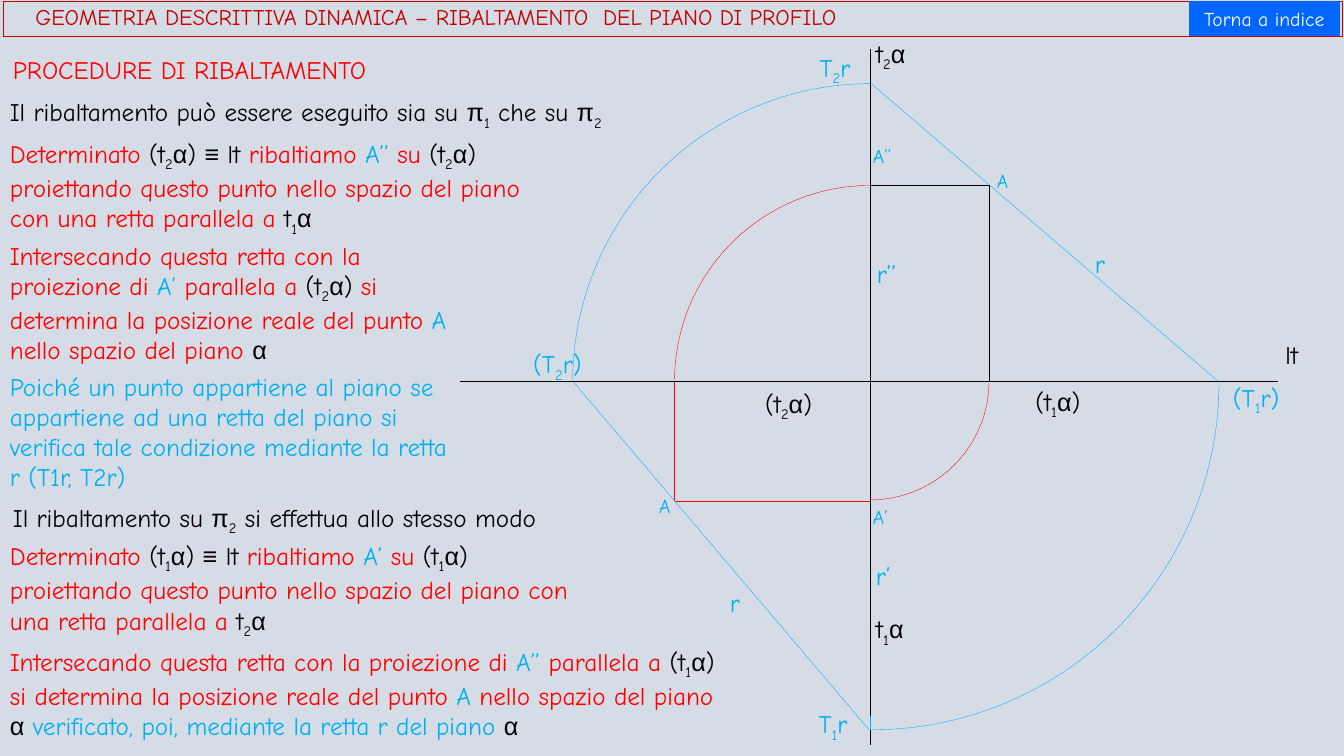
from itertools import groupby
from typing import NamedTuple

from lxml import etree
from pptx import Presentation, util as u
from pptx.dml.color import RGBColor
from pptx.enum import shapes, text
from pptx.oxml.ns import qn

PX = 9144  # EMU per px, 100 px to the inch
BACKGROUND = RGBColor(0xD6, 0xDC, 0xE5)
BLACK = RGBColor(0, 0, 0)
RED = RGBColor(0xFF, 0, 0)
DARK_RED = RGBColor(0xC0, 0, 0)
CYAN = RGBColor(0, 0xB0, 0xF0)
BLUE = RGBColor(0, 0x66, 0xFF)
WHITE = RGBColor(0xFF, 0xFF, 0xFF)
FONT, SYMBOL_FONT, SYMBOLS = "Comic Neue", "Arial", "απ≡"
HAIRLINE = u.Pt(0.25)


class Phrase(NamedTuple):
    words: str  # an underscore lowers the next character
    color: RGBColor


class Note(NamedTuple):
    left: int
    top: int
    width: int
    height: int
    phrases: list[Phrase]
    size: int = 18


class Segment(NamedTuple):
    x1: int
    y1: int
    x2: int
    y2: int
    color: RGBColor


class Arc(NamedTuple):
    left: int
    top: int
    diameter: int
    start: int  # degrees, clockwise; each arc spans a quarter turn
    color: RGBColor


def glyph_styles(words: str) -> list[tuple[str, tuple[str, bool]]]:
    glyphs, lowered = [], False
    for char in words:
        if char == "_":
            lowered = True
            continue
        glyphs.append((char, (SYMBOL_FONT if char in SYMBOLS else FONT, lowered)))
        lowered = False
    return [("".join(char for char, _ in group), style)
            for style, group in groupby(glyphs, key=lambda glyph: glyph[1])]


def write(frame, phrases: list[Phrase], *, size: int = 18, align=text.PP_ALIGN.LEFT,
          anchor=text.MSO_ANCHOR.TOP, spacing: float = 1.0) -> None:
    frame.word_wrap = True
    frame.vertical_anchor = anchor
    paragraph = frame.paragraphs[0]
    paragraph.alignment = align
    paragraph.line_spacing = spacing
    for phrase in phrases:
        for words, (font, lowered) in glyph_styles(phrase.words):
            run = paragraph.add_run()
            run.text = words
            run.font.name, run.font.size = font, u.Pt(size)
            run.font.color.rgb = phrase.color
            if lowered:
                run.font._element.set("baseline", "-25000")


def add_note(slide, note: Note) -> None:
    box = slide.shapes.add_textbox(*(n * PX for n in note[:4]))
    write(box.text_frame, note.phrases, size=note.size)
    box.text_frame.auto_size = text.MSO_AUTO_SIZE.SHAPE_TO_FIT_TEXT


def add_segment(slide, segment: Segment) -> None:
    line = slide.shapes.add_connector(shapes.MSO_CONNECTOR.STRAIGHT,
                                      *(n * PX for n in segment[:4]))
    line.line.color.rgb = segment.color
    line.line.width = HAIRLINE
    etree.SubElement(line._element.spPr, qn("a:effectLst"))


def add_outline(slide, preset, left: int, top: int, width: int, height: int,
                color: RGBColor):
    shape = slide.shapes.add_shape(preset, left * PX, top * PX, width * PX, height * PX)
    shape.shadow.inherit = False
    shape.fill.background()
    shape.line.color.rgb = color
    shape.line.width = HAIRLINE
    return shape


def add_arc(slide, arc: Arc) -> None:
    shape = add_outline(slide, shapes.MSO_SHAPE.ARC, arc.left, arc.top,
                        arc.diameter, arc.diameter, arc.color)
    for i, degrees in enumerate((arc.start, arc.start + 90)):
        shape.adjustments[i] = degrees * 0.6


def add_header(slide) -> None:
    band = add_outline(slide, shapes.MSO_SHAPE.RECTANGLE, 3, 1, 1328, 35, DARK_RED)
    band.text_frame.margin_left = 32 * PX
    title = "GEOMETRIA DESCRITTIVA DINAMICA – RIBALTAMENTO  DEL PIANO DI PROFILO"
    write(band.text_frame, [Phrase(title, DARK_RED)], size=16,
          anchor=text.MSO_ANCHOR.MIDDLE, spacing=0.9)
    button = add_outline(slide, shapes.MSO_SHAPE.ACTION_BUTTON_CUSTOM,
                         1179, 1, 150, 35, BLUE)
    button.fill.solid()
    button.fill.fore_color.rgb = BLUE
    button.line.fill.background()
    write(button.text_frame, [Phrase("Torna a indice", WHITE)], size=14,
          align=text.PP_ALIGN.CENTER, anchor=text.MSO_ANCHOR.MIDDLE)


def projection_step(trace: str, point: str, parallel: str) -> list[Phrase]:
    return [Phrase("Determinato ", RED), Phrase(f"({trace}) ≡ lt ", BLACK),
            Phrase("ribaltiamo ", RED), Phrase(f"{point} ", CYAN), Phrase("su ", RED),
            Phrase(f"({trace}) ", BLACK),
            Phrase("proiettando questo punto nello spazio del piano "
                   "con una retta parallela a ", RED), Phrase(parallel, BLACK)]


def intersection_step(point: str, trace: str) -> list[Phrase]:
    return [Phrase("Intersecando questa retta con la proiezione di ", RED),
            Phrase(point, CYAN), Phrase(" parallela a ", RED), Phrase(f"({trace})", BLACK),
            Phrase(" si determina la posizione reale del punto ", RED),
            Phrase("A ", CYAN), Phrase("nello spazio del piano ", RED)]


# Construction: axes, projections of A, line r
OX, OY = 863, 378
SEGMENTS = [
    Segment(458, OY, 1268, OY, BLACK), Segment(OX, 49, OX, 739, BLACK),
    Segment(OX, 88, OX, 724, CYAN),
    Segment(OX, 184, 981, 184, BLACK), Segment(981, OY, 981, 184, BLACK),
    Segment(669, OY, 669, 497, RED), Segment(OX, 497, 669, 497, RED),
    Segment(OX, 82, 1209, 379, CYAN), Segment(568, OY, 862, 724, CYAN),
]
AXES_ON_TOP = [Segment(456, OY, 1265, OY, BLACK), Segment(OX, OY, OX, 49, BLACK),
               Segment(OX, OY, OX, 710, BLACK)]
ARCS = [Arc(745, 260, 236, 0, RED), Arc(669, 184, 388, 180, RED),
        Arc(520, 35, 689, 0, CYAN), Arc(568, 83, 591, 180, CYAN)]

# Labels of the construction
LABELS = [
    Note(859, 604, 56, 40, [Phrase("t_1α", BLACK)]),
    Note(1265, 332, 56, 40, [Phrase("lt", BLACK)]),
    Note(859, 33, 86, 40, [Phrase("t_2α", BLACK)]),
    Note(1017, 378, 75, 39, [Phrase("(t_1α)", BLACK)]),
    Note(749, 380, 79, 39, [Phrase("(t_2α)", BLACK)]),
    Note(856, 496, 53, 34, [Phrase("A’", CYAN)], 14),
    Note(856, 138, 53, 34, [Phrase("A’’", CYAN)], 14),
    Note(979, 163, 53, 34, [Phrase("A", CYAN)], 14),
    Note(644, 485, 53, 34, [Phrase("A", CYAN)], 14),
    Note(1213, 374, 79, 39, [Phrase("(T_1r)", CYAN)]),
    Note(519, 341, 79, 39, [Phrase("(T_2r)", CYAN)]),
    Note(803, 47, 63, 40, [Phrase("T_2r", CYAN)]),
    Note(802, 698, 63, 40, [Phrase("T_1r", CYAN)]),
    Note(859, 551, 46, 40, [Phrase("r’", CYAN)]),
    Note(860, 251, 57, 40, [Phrase("r’’", CYAN)]),
    Note(1076, 241, 46, 40, [Phrase("r", CYAN)]),
    Note(714, 578, 46, 40, [Phrase("r", CYAN)]),
]

# Procedure in the left column
PROCEDURE = [
    Note(3, 49, 593, 40, [Phrase("PROCEDURE DI RIBALTAMENTO", RED)]),
    Note(0, 91, 657, 40,
         [Phrase("Il ribaltamento può essere eseguito sia su π_1 che su π_2", BLACK)]),
    Note(0, 132, 530, 101, projection_step("t_2α", "A’’", "t_1α")),
    Note(0, 233, 473, 131, intersection_step("A’", "t_2α") + [Phrase("α", BLACK)]),
    Note(0, 363, 465, 131,
         [Phrase("Poiché un punto appartiene al piano se appartiene ad una retta del piano "
                 "si verifica tale condizione mediante la retta r (T1r, T2r)", CYAN)]),
    Note(3, 493, 631, 40,
         [Phrase("Il ribaltamento su π_2 si effettua allo stesso modo", BLACK)]),
    Note(0, 531, 602, 101, projection_step("t_1α", "A’", "t_2α")),
    Note(0, 636, 723, 101, intersection_step("A’’", "t_1α") + [
        Phrase("α ", BLACK),
        Phrase("verificato, poi, mediante la retta r del piano ", CYAN),
        Phrase("α", BLACK)]),
]


def main() -> None:
    deck = Presentation()
    deck.slide_width, deck.slide_height = 1333 * PX, 750 * PX
    slide = deck.slides.add_slide(deck.slide_layouts[6])
    slide.background.fill.solid()
    slide.background.fill.fore_color.rgb = BACKGROUND
    add_header(slide)
    for segment in SEGMENTS:
        add_segment(slide, segment)
    for arc in ARCS:
        add_arc(slide, arc)
    for note in LABELS + PROCEDURE:
        add_note(slide, note)
    for axis in AXES_ON_TOP:
        add_segment(slide, axis)
    deck.save("out.pptx")


if __name__ == "__main__":
    main()
